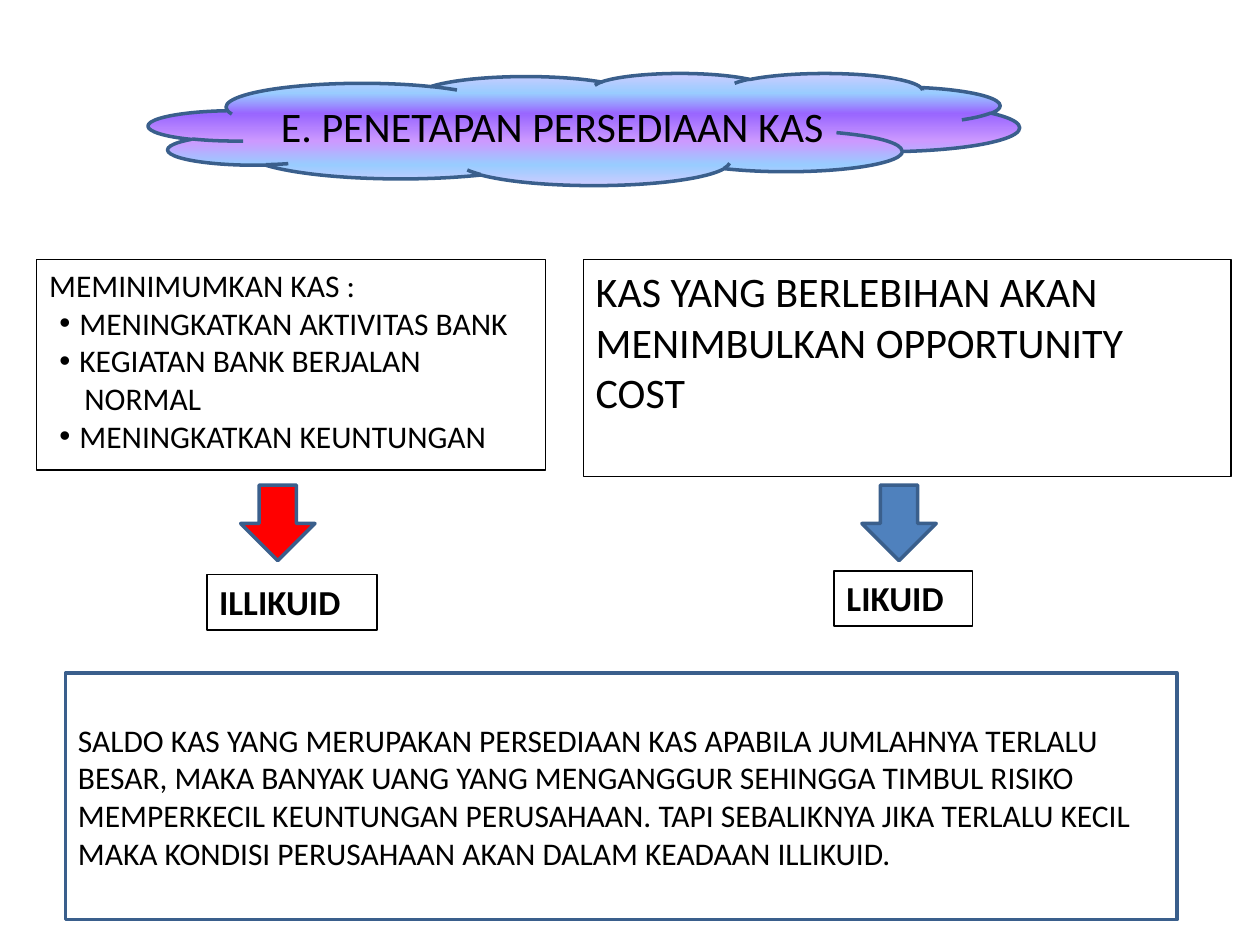
from dataclasses import dataclass

from lxml.etree import SubElement
from pptx import Presentation
from pptx.dml.color import RGBColor
from pptx.enum.shapes import MSO_SHAPE
from pptx.enum.text import MSO_ANCHOR, MSO_AUTO_SIZE, PP_ALIGN
from pptx.oxml import parse_xml
from pptx.oxml.ns import nsdecls, qn
from pptx.util import Inches, Pt


@dataclass(frozen=True)
class Theme:
    font: str = "Calibri"
    ink: str = "000000"
    outline: str = "3A5F8C"
    red: str = "FF0000"
    blue: str = "4F81BD"
    body: int = 18
    label: int = 20
    heading: int = 24
    thin: float = 0.75
    medium: float = 1
    thick: float = 2


THEME = Theme()
CLOUD_STOPS = [(0, "CCCCFF"), (18, "99CCFF"), (36, "9966FF"),
               (61, "CC99FF"), (82, "99CCFF"), (100, "CCCCFF")]

TITLE = "E. PENETAPAN PERSEDIAAN KAS"
# Text, left margin in inches, whether it has a bullet
MINIMUM_CASH = [
    ("MEMINIMUMKAN KAS :", 0, False),
    ("MENINGKATKAN AKTIVITAS BANK", 0.24, True),
    ("KEGIATAN BANK BERJALAN", 0.24, True),
    ("NORMAL", 0.28, False),
    ("MENINGKATKAN KEUNTUNGAN", 0.24, True),
]
EXCESS_CASH = "KAS YANG BERLEBIHAN AKAN MENIMBULKAN OPPORTUNITY COST"
CONCLUSION = (
    "SALDO KAS YANG MERUPAKAN PERSEDIAAN KAS APABILA JUMLAHNYA TERLALU BESAR, "
    "MAKA BANYAK UANG YANG MENGANGGUR SEHINGGA TIMBUL RISIKO MEMPERKECIL "
    "KEUNTUNGAN PERUSAHAAN. TAPI SEBALIKNYA JIKA TERLALU KECIL MAKA KONDISI "
    "PERUSAHAAN AKAN DALAM KEADAAN ILLIKUID."
)

# Left, top, width, height in inches
CLOUD_AREA = (1.18, 0.58, 6.91, 0.89)
TITLE_AREA = (2.13, 0.7, 5, 0.6)
MINIMUM_AREA = (0.29, 2.06, 4.04, 1.67)
EXCESS_AREA = (4.63, 2.06, 5.14, 1.72)
CONCLUSION_AREA = (0.52, 5.34, 8.82, 1.96)
ARROW_TOP, ARROW_WIDTH, ARROW_HEIGHT = 3.85, 0.59, 0.6
# Arrow left, arrow colour, label, label area
OUTCOMES = [
    (1.91, THEME.red, "ILLIKUID", (1.64, 4.56, 1.35, 0.44)),
    (6.84, THEME.blue, "LIKUID", (6.62, 4.53, 1.1, 0.44)),
]


def place(shape, area):
    shape.left, shape.top, shape.width, shape.height = map(Inches, area)


def outline(shape, color, width):
    shape.line.color.rgb = RGBColor.from_string(color)
    shape.line.width = Pt(width)


def add_shape(page, kind, area, color, width, fill=None):
    shape = page.shapes.add_shape(kind, *map(Inches, area))
    shape.shadow.inherit = False
    outline(shape, color, width)
    if fill:
        shape.fill.solid()
        shape.fill.fore_color.rgb = RGBColor.from_string(fill)
    else:
        shape.fill.background()
    return shape


def prepare_frame(shape, anchor):
    frame = shape.text_frame
    frame.word_wrap = True
    frame.auto_size = MSO_AUTO_SIZE.NONE
    frame.vertical_anchor = anchor
    return frame


def write(para, text, size, bold=False):
    para.alignment = PP_ALIGN.LEFT
    para.space_before = Pt(0)
    span = para.add_run()
    span.text = text
    span.font.name = THEME.font
    span.font.size = Pt(size)
    span.font.bold = bold
    span.font.color.rgb = RGBColor.from_string(THEME.ink)


def add_text_box(page, area, text, size, color, width,
                 anchor=MSO_ANCHOR.TOP, bold=False):
    box = add_shape(page, MSO_SHAPE.RECTANGLE, area, color, width)
    write(prepare_frame(box, anchor).paragraphs[0], text, size, bold)


def set_bullet(para, margin, bulleted):
    properties = para._p.get_or_add_pPr()
    properties.set("marL", str(Inches(margin)))
    properties.set("indent", str(Inches(-0.16 if bulleted else 0)))
    if bulleted:
        SubElement(properties, qn("a:buChar")).set("char", "•")
    else:
        SubElement(properties, qn("a:buNone"))


def fill_gradient(shape, stops):
    """Fill from top to bottom through any number of colour stops."""
    marks = "".join(
        f'<a:gs pos="{percent * 1000}"><a:srgbClr val="{color}"/></a:gs>'
        for percent, color in stops)
    gradient = parse_xml(
        f'<a:gradFill {nsdecls("a")}><a:gsLst>{marks}</a:gsLst>'
        '<a:lin ang="5400000" scaled="0"/></a:gradFill>')
    properties = shape._element.spPr
    properties.replace(properties.find(qn("a:noFill")), gradient)


def add_title(page):
    cloud = add_shape(page, MSO_SHAPE.CLOUD, CLOUD_AREA, THEME.outline, THEME.thick)
    fill_gradient(cloud, CLOUD_STOPS)
    title = page.shapes.title
    place(title, TITLE_AREA)
    frame = prepare_frame(title, MSO_ANCHOR.MIDDLE)
    write(frame.paragraphs[0], TITLE, THEME.heading)
    cloud._element.addnext(title._element)  # keep the title in front


def add_minimum_list(page):
    body = page.placeholders[1]
    place(body, MINIMUM_AREA)
    outline(body, THEME.ink, THEME.thin)
    frame = prepare_frame(body, MSO_ANCHOR.TOP)
    for index, (text, margin, bulleted) in enumerate(MINIMUM_CASH):
        para = frame.add_paragraph() if index else frame.paragraphs[0]
        write(para, text, THEME.body)
        set_bullet(para, margin, bulleted)


def main():
    deck = Presentation()
    deck.slide_width, deck.slide_height = Inches(10), Inches(7.5)
    page = deck.slides.add_slide(deck.slide_layouts[1])
    add_minimum_list(page)
    add_text_box(page, EXCESS_AREA, EXCESS_CASH, THEME.heading, THEME.ink, THEME.thin)
    add_title(page)
    for left, color, label, area in OUTCOMES:
        add_text_box(page, area, label, THEME.label, THEME.ink, THEME.medium, bold=True)
        add_shape(page, MSO_SHAPE.DOWN_ARROW,
                  (left, ARROW_TOP, ARROW_WIDTH, ARROW_HEIGHT),
                  THEME.outline, THEME.thick, color)
    add_text_box(page, CONCLUSION_AREA, CONCLUSION, THEME.body,
                 THEME.outline, THEME.thick, MSO_ANCHOR.MIDDLE)
    deck.save("out.pptx")


if __name__ == "__main__":
    main()
